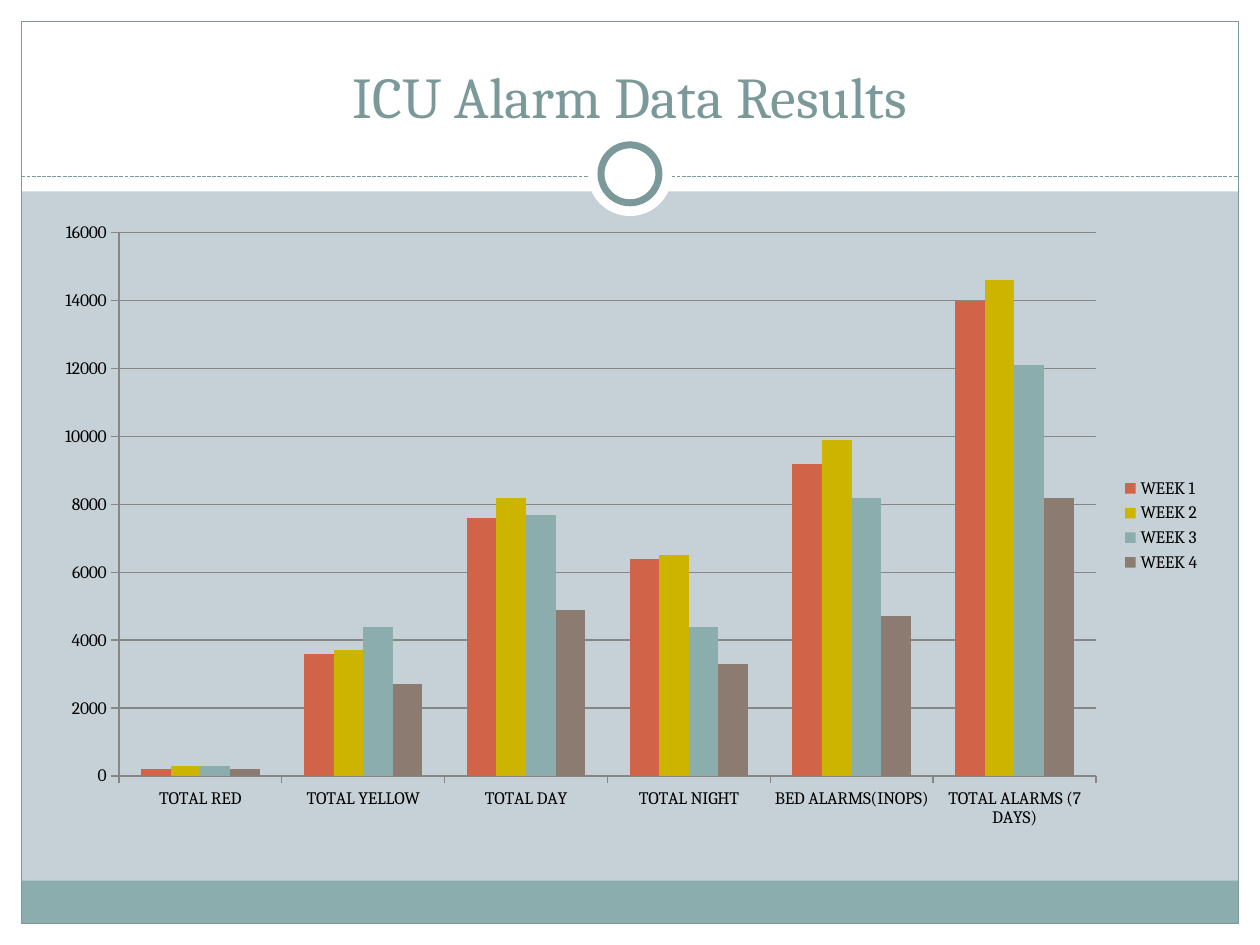
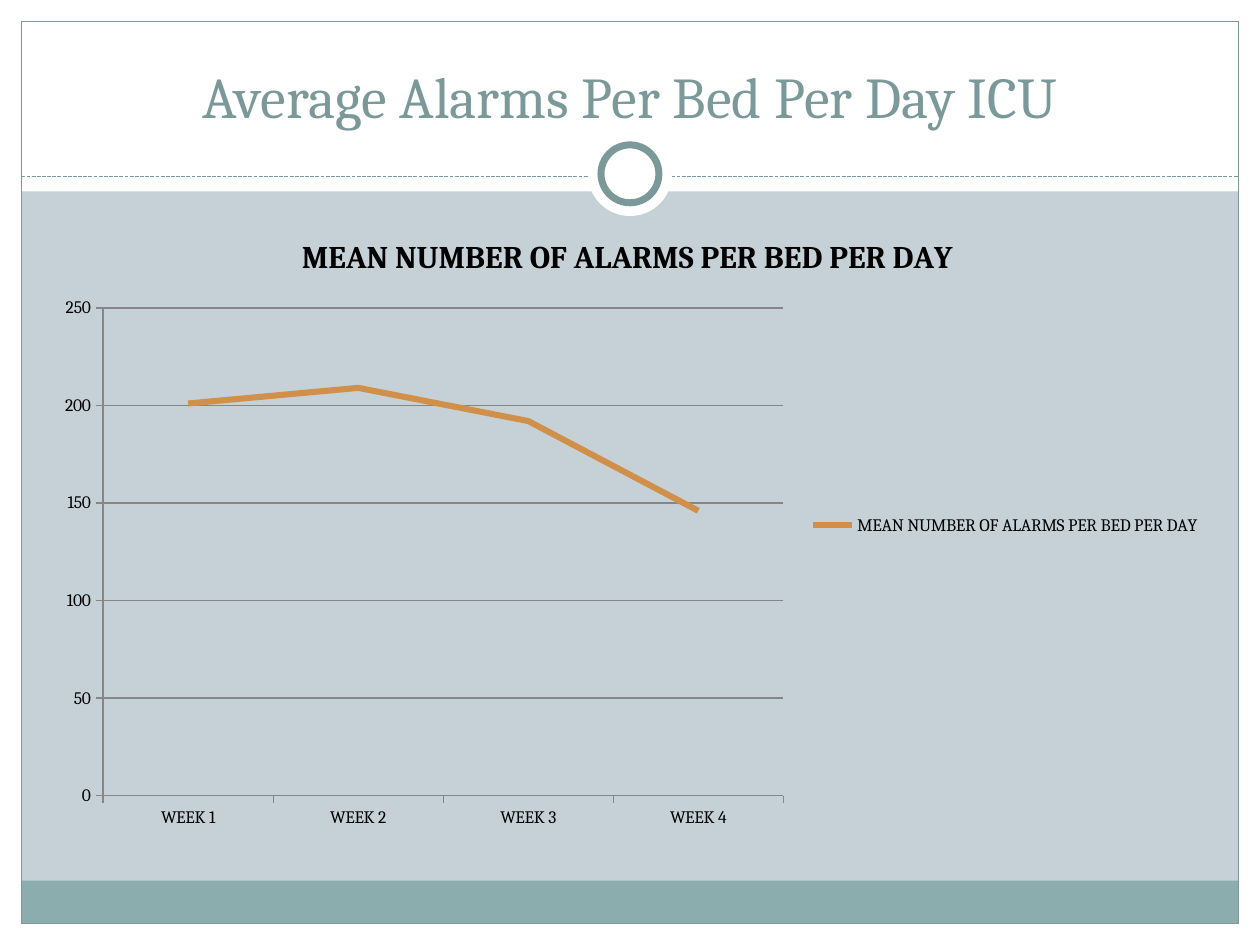
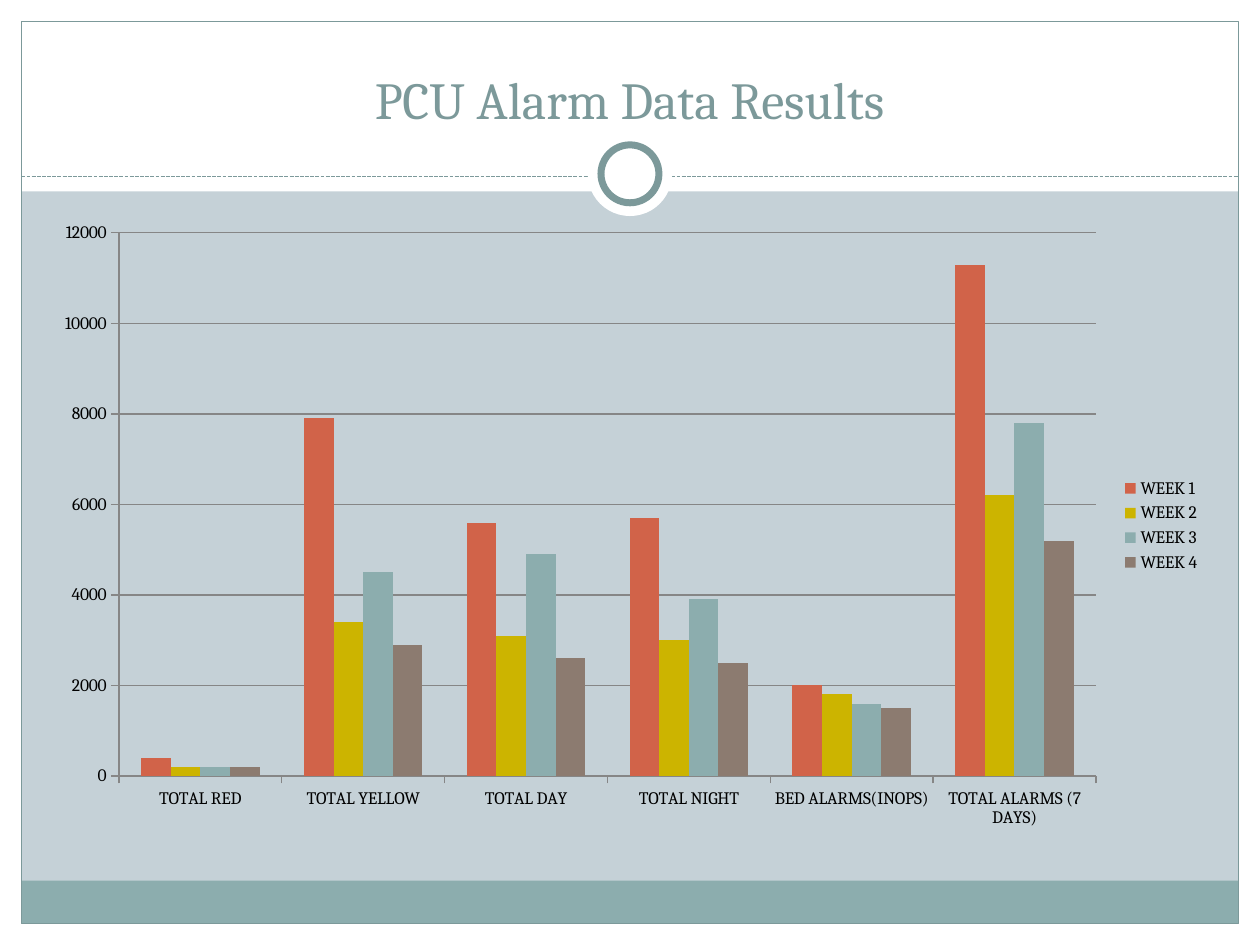
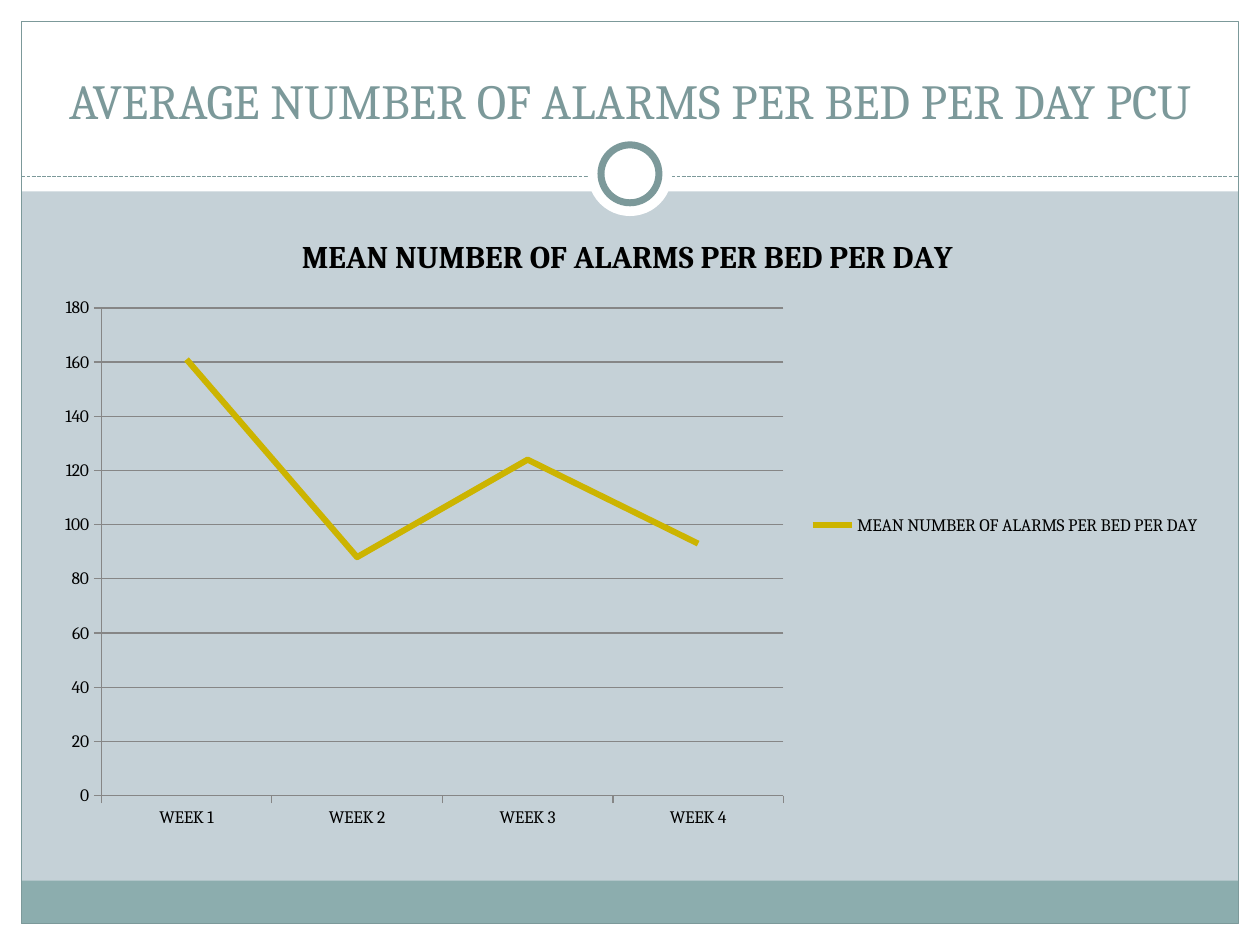
from lxml.etree import SubElement
from pptx import Presentation
from pptx.chart.data import CategoryChartData
from pptx.dml.color import RGBColor
from pptx.enum.chart import XL_CHART_TYPE as ChartType
from pptx.enum.chart import XL_LEGEND_POSITION as LegendSide
from pptx.enum.chart import XL_MARKER_STYLE as Marker
from pptx.enum.chart import XL_TICK_MARK as Tick
from pptx.enum.dml import MSO_LINE as Dash
from pptx.enum.shapes import MSO_CONNECTOR as Connector
from pptx.enum.shapes import MSO_SHAPE as Shape
from pptx.enum.text import MSO_ANCHOR as Anchor
from pptx.enum.text import PP_ALIGN as Align
from pptx.oxml.ns import qn
from pptx.util import Inches, Pt

COLORS = {
    "background": "C5D1D7", "paper": "FFFFFF", "band": "8CADAE",
    "accent": "7C999A", "ink": "000000", "axis": "868686",
    "red": "D16349", "yellow": "CCB400", "teal": "8CADAE",
    "brown": "8C7B70", "orange": "D19049",
}
FONT = "Cambria"
WEEKS = ["WEEK 1", "WEEK 2", "WEEK 3", "WEEK 4"]
WEEK_COLORS = ["red", "yellow", "teal", "brown"]
ALARM_TYPES = ["TOTAL RED", "TOTAL YELLOW", "TOTAL DAY", "TOTAL NIGHT",
               "BED ALARMS(INOPS)", "TOTAL ALARMS (7 DAYS)"]
MEAN = "MEAN NUMBER OF ALARMS PER BED PER DAY"

SLIDES = [
    {"title": "ICU Alarm Data Results", "size": 33,
     "type": ChartType.COLUMN_CLUSTERED, "categories": ALARM_TYPES,
     "top": 16000, "step": 2000, "colors": WEEK_COLORS,
     "series": dict(zip(WEEKS, [
         (200, 3600, 7600, 6400, 9200, 14000),
         (300, 3700, 8200, 6500, 9900, 14600),
         (300, 4400, 7700, 4400, 8200, 12100),
         (200, 2700, 4900, 3300, 4700, 8200)]))},
    {"title": "Average Alarms Per Bed Per Day ICU", "size": 33,
     "type": ChartType.LINE, "categories": WEEKS,
     "top": 250, "step": 50, "colors": ["orange"],
     "series": {MEAN: (201, 209, 192, 146)}},
    {"title": "PCU Alarm Data Results", "size": 29.7,
     "type": ChartType.COLUMN_CLUSTERED, "categories": ALARM_TYPES,
     "top": 12000, "step": 2000, "colors": WEEK_COLORS,
     "series": dict(zip(WEEKS, [
         (400, 7900, 5600, 5700, 2000, 11300),
         (200, 3400, 3100, 3000, 1800, 6200),
         (200, 4500, 4900, 3900, 1600, 7800),
         (200, 2900, 2600, 2500, 1500, 5200)]))},
    {"title": "AVERAGE NUMBER OF ALARMS PER BED PER DAY PCU", "size": 28,
     "type": ChartType.LINE, "categories": WEEKS,
     "top": 180, "step": 20, "colors": ["yellow"],
     "series": {MEAN: (161, 88, 124, 93)}},
]

WIDTH, HEIGHT = 10, 7.5
MARGIN = 0.17
INNER_WIDTH = WIDTH - 2 * MARGIN
HEADER_HEIGHT = 1.52
BAND_HEIGHT = 0.34
RULE_TOP = 1.4
RING_CENTER = 1.38
CONTENT_LEFT = 2 * MARGIN - 0.01


def color(name):
    return RGBColor.from_string(COLORS[name])


def style_font(font, size, name="ink", bold=False):
    font.name, font.size, font.bold = FONT, Pt(size), bold
    font.color.rgb = color(name)


def style_line(line, name, width):
    line.color.rgb = color(name)
    line.width = Pt(width)


def add_block(page, kind, bounds, fill=None, outline=None):
    """Add a shape; outline is the line width in points."""
    block = page.shapes.add_shape(kind, *map(Inches, bounds))
    block.shadow.inherit = False
    if fill:
        block.fill.solid()
        block.fill.fore_color.rgb = color(fill)
    else:
        block.fill.background()
    if outline:
        style_line(block.line, "accent", outline)
    else:
        block.line.fill.background()


def add_disc(page, diameter, outline=None):
    bounds = ((WIDTH - diameter) / 2, RING_CENTER - diameter / 2,
              diameter, diameter)
    add_block(page, Shape.OVAL, bounds, "paper", outline)


def add_frame(page):
    """Draw the margins, bands, border, dashed rule and ring of every page."""
    page.background.fill.solid()
    page.background.fill.fore_color.rgb = color("background")
    bottom, right = HEIGHT - MARGIN, WIDTH - MARGIN
    for bounds in [(0, bottom, WIDTH, MARGIN), (0, 0, WIDTH, HEADER_HEIGHT),
                   (0, 0, MARGIN, HEIGHT), (right, 0, MARGIN, HEIGHT)]:
        add_block(page, Shape.RECTANGLE, bounds, "paper")
    add_block(page, Shape.RECTANGLE,
              (MARGIN, bottom - BAND_HEIGHT, INNER_WIDTH, BAND_HEIGHT), "band")
    add_block(page, Shape.RECTANGLE,
              (MARGIN, MARGIN, INNER_WIDTH, HEIGHT - 2 * MARGIN), outline=0.75)
    rule = page.shapes.add_connector(
        Connector.STRAIGHT,
        *map(Inches, (MARGIN, RULE_TOP, right, RULE_TOP)))
    style_line(rule.line, "accent", 0.75)
    rule.line.dash_style = Dash.SQUARE_DOT
    SubElement(rule.element.spPr, qn("a:effectLst"))
    add_disc(page, 0.67)
    add_disc(page, 0.46, outline=4)


def add_title(page, text, size):
    box = page.shapes.add_textbox(
        *map(Inches, (CONTENT_LEFT, 0.25, WIDTH - 2 * CONTENT_LEFT, 0.83)))
    frame = box.text_frame
    frame.word_wrap = True
    frame.vertical_anchor = Anchor.BOTTOM
    para = frame.paragraphs[0]
    para.alignment = Align.CENTER
    span = para.add_run()
    span.text = text
    style_font(span.font, size, "accent")


def add_data_chart(page, content):
    data = CategoryChartData()
    data.categories = content["categories"]
    for name, values in content["series"].items():
        data.add_series(name, values)
    chart = page.shapes.add_chart(
        content["type"], *map(Inches, (CONTENT_LEFT, 1.67, 9.3, 5)), data).chart
    style_font(chart.font, 10)

    is_line = content["type"] == ChartType.LINE
    chart.has_title = is_line
    if is_line:
        span = chart.chart_title.text_frame.paragraphs[0].add_run()
        span.text = MEAN
        style_font(span.font, 18, bold=True)
    chart.has_legend = True
    chart.legend.position = LegendSide.RIGHT
    chart.legend.include_in_layout = False

    value_axis = chart.value_axis
    value_axis.minimum_scale = 0
    value_axis.maximum_scale = content["top"]
    value_axis.major_unit = content["step"]
    value_axis.has_major_gridlines = True
    style_line(value_axis.major_gridlines.format.line, "axis", 0.75)
    for axis in (chart.category_axis, value_axis):
        axis.major_tick_mark = Tick.OUTSIDE
        style_line(axis.format.line, "axis", 0.75)

    plot = chart.plots[0]
    plot.vary_by_categories = False
    if not is_line:
        plot.gap_width = 150
        plot.overlap = 0
    for series, name in zip(plot.series, content["colors"]):
        if is_line:
            series.smooth = False
            series.marker.style = Marker.NONE
            style_line(series.format.line, name, 3.5)
        else:
            series.format.fill.solid()
            series.format.fill.fore_color.rgb = color(name)


def main():
    deck = Presentation()
    deck.slide_width, deck.slide_height = Inches(WIDTH), Inches(HEIGHT)
    for content in SLIDES:
        page = deck.slides.add_slide(deck.slide_layouts[6])
        add_frame(page)
        add_title(page, content["title"], content["size"])
        add_data_chart(page, content)
    deck.save("out.pptx")


if __name__ == "__main__":
    main()
